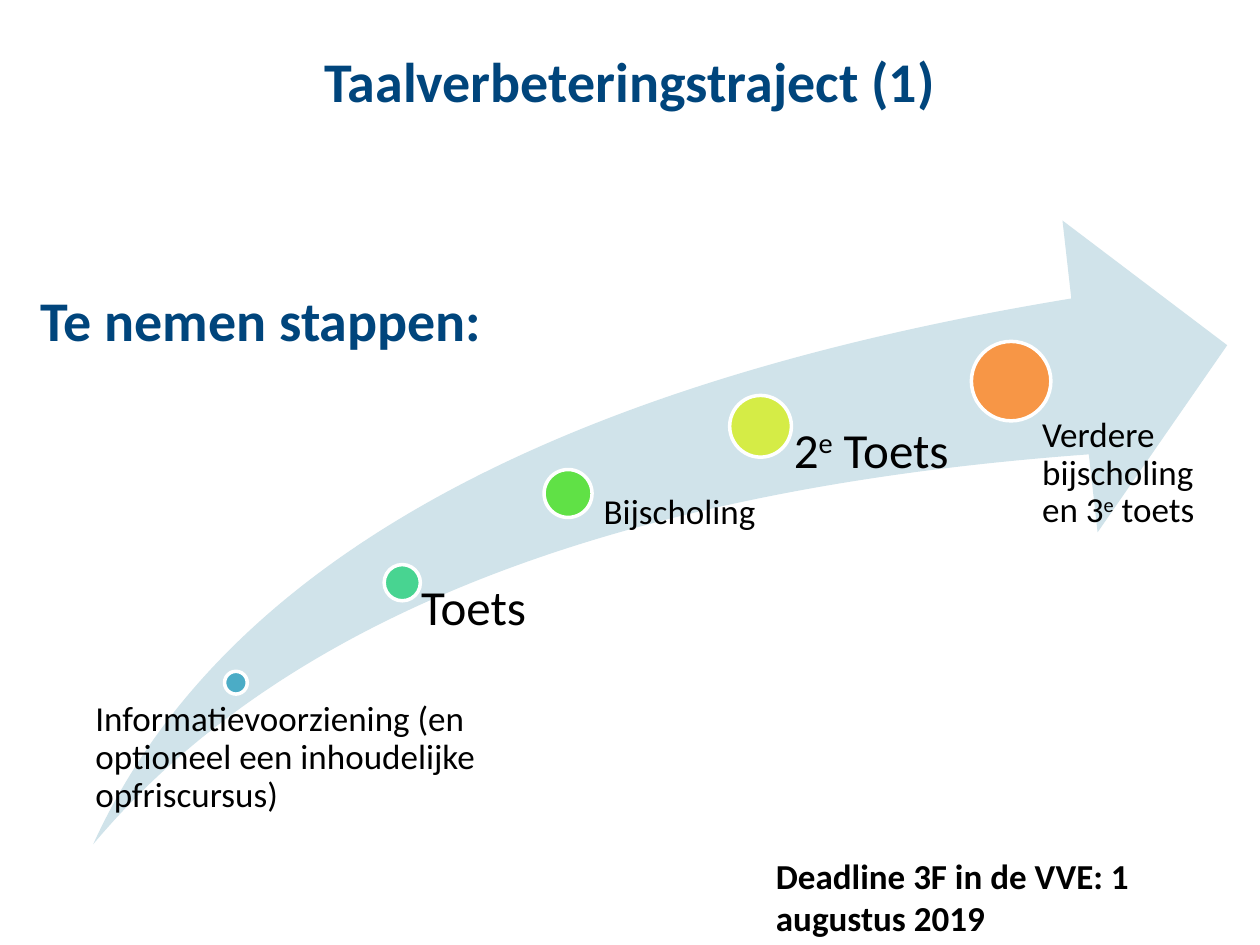
from pptx import Presentation
from pptx.dml.color import RGBColor
from pptx.enum.shapes import MSO_SHAPE as Shape
from pptx.enum.text import MSO_ANCHOR as Anchor, PP_ALIGN as Align
from pptx.util import Pt

COLORS = {"heading": "00457C", "text": "000000", "arrow": "D0E3EA", "outline": "FFFFFF"}

deck = Presentation()
deck.slide_width, deck.slide_height = Pt(720), Pt(540)
page = deck.slides.add_slide(deck.slide_layouts[6])


def add_text(place, parts, size, insets, color="text", bold=False, align=Align.LEFT, spacing=1.0):
    """Add a text box; every second part is superscript."""
    box = page.shapes.add_textbox(*map(Pt, place))
    frame = box.text_frame
    frame.word_wrap = True
    frame.vertical_anchor = Anchor.TOP
    frame.margin_left, frame.margin_top, frame.margin_right, frame.margin_bottom = map(Pt, insets)
    para = frame.paragraphs[0]
    para.alignment = align
    para.line_spacing = spacing
    for index, part in enumerate(parts):
        span = para.add_run()
        span.text = part
        span.font.name = "Calibri"
        span.font.size = Pt(size)
        span.font.bold = bold
        span.font.color.rgb = RGBColor.from_string(COLORS[color])
        if index % 2:
            span.font._element.set("baseline", "30000")


def add_filled(kind, place, fill):
    shape = page.shapes.add_shape(kind, *map(Pt, place))
    shape.shadow.inherit = False
    shape.fill.solid()
    shape.fill.fore_color.rgb = RGBColor.from_string(fill)
    return shape


heading = dict(size=32, insets=(9.4, 5, 9.4, 5), color="heading", bold=True, align=Align.CENTER)
add_text((36, 21.6, 648, 90), ["Taalverbeteringstraject (1)"], **heading)

arrow = add_filled(Shape.SWOOSH_ARROW, (53.3, 126, 648, 482.4 - 126), COLORS["arrow"])
arrow.adjustments[0] = arrow.adjustments[1] = 0.25
arrow.line.fill.background()

# Dot centre x, centre y, diameter, colour; label place, left inset, size, text parts
steps = [
    (134.8, 390.1, 13, "4BACC6", (47.5, 401, 290.2, 46.8), 7,
     20, ["Informatievoorziening (en optioneel een inhoudelijke opfriscursus)"]),
    (229.9, 333, 20.7, "48D491", (229.7, 333.4, 94.3, 149), 11,
     28, ["Toets"]),
    (324.6, 282, 27.4, "60E146", (330.5, 282.2, 258.5, 200.2), 14.4,
     20, ["Bijscholing"]),
    (434.6, 243.6, 35.3, "D5EC46", (434.9, 243.4, 113.8, 239), 18.7,
     28, ["2", "e", " Toets"]),
    (577.8, 217.8, 45.4, "F79646", (571.7, 238.3, 113.8, 113.8), 23.8,
     20, ["Verdere bijscholing en 3", "e", " toets"]),
]
for center_x, center_y, diameter, fill, place, inset, size, parts in steps:
    radius = diameter / 2
    dot = add_filled(Shape.OVAL, (center_x - radius, center_y - radius, diameter, diameter), fill)
    dot.line.color.rgb = RGBColor.from_string(COLORS["outline"])
    dot.line.width = Pt(2)
    add_text(place, parts, size, (inset, 0, 0, 0), spacing=0.9)

add_text((0, 158.4, 298.8, 90), ["Te nemen stappen:"], **heading)
add_text((436.3, 484.6, 270.7, 55.4), ["Deadline 3F in de VVE: 1 augustus 2019"],
         20, (7.2, 3.6, 7.2, 3.6), bold=True)

deck.save("out.pptx")
